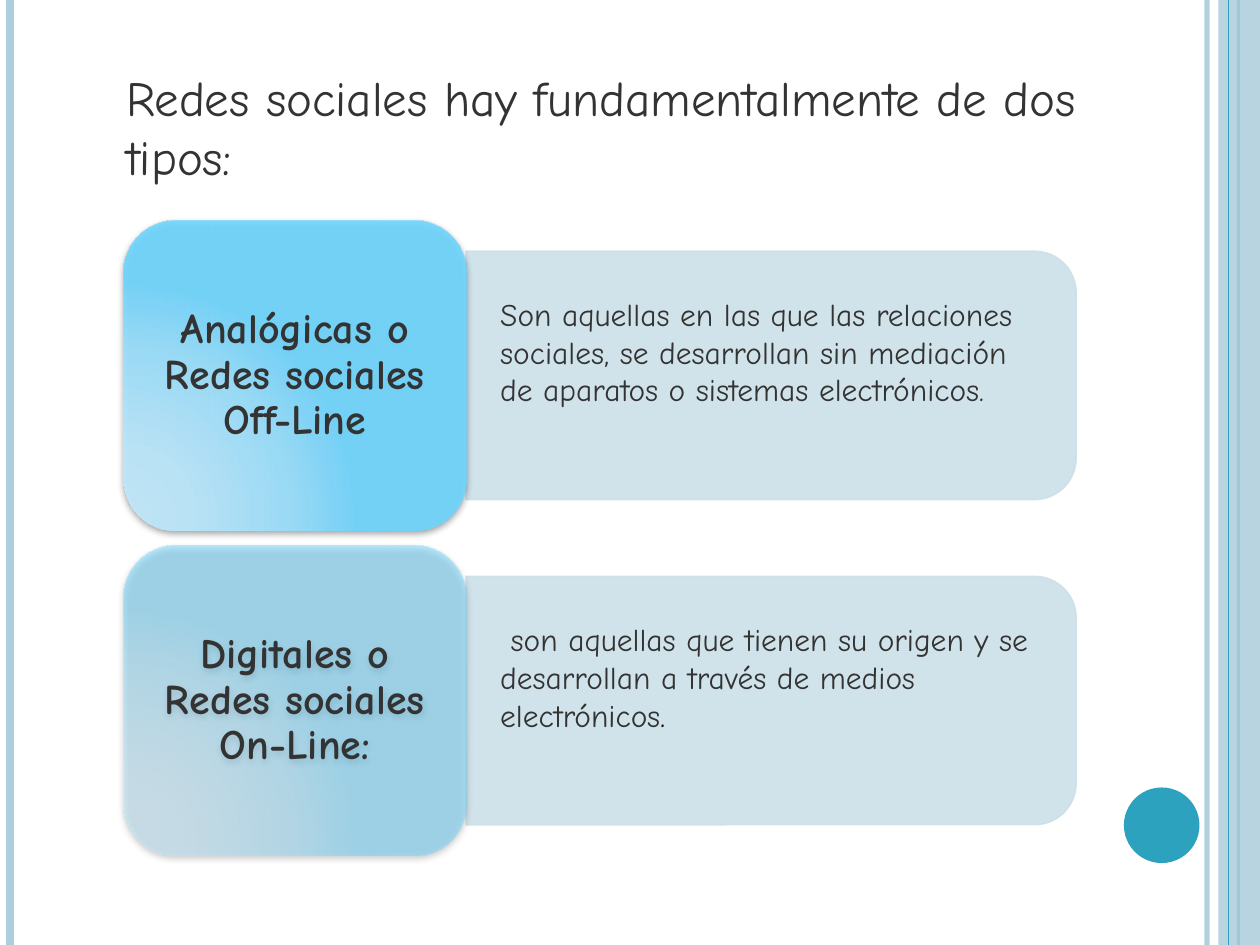
from lxml import etree
from pptx import Presentation
from pptx.dml.color import RGBColor
from pptx.enum.shapes import MSO_CONNECTOR, MSO_SHAPE
from pptx.enum.text import MSO_ANCHOR, PP_ALIGN
from pptx.oxml import parse_xml
from pptx.oxml.ns import nsdecls, qn
from pptx.util import Inches, Pt

STRAIGHT = MSO_CONNECTOR.STRAIGHT
RECT, OVAL = MSO_SHAPE.RECTANGLE, MSO_SHAPE.OVAL
CARD, PANEL = MSO_SHAPE.ROUNDED_RECTANGLE, MSO_SHAPE.ROUND_2_SAME_RECTANGLE
MIDDLE = MSO_ANCHOR.MIDDLE
LEFT, CENTER = PP_ALIGN.LEFT, PP_ALIGN.CENTER

FONT = "Comic Neue"
INK, ACCENT, PALE, PANEL_FILL = "333333", "2DA2BF", "ADCEDC", "CDE0E8"
GRADIENT = [(0, "C2EBFD"), (30, "BCE9FE"), (75, "96DFFE"), (100, "70D6FF")]

TITLE = "Redes sociales hay fundamentalmente de dos tipos:"
# heading, description runs (text, colour), opacity of the card
NETWORKS = [
    ("Analógicas o Redes sociales Off-Line",
     [("Son aquellas en las que las relaciones sociales, se desarrollan sin "
       "mediación de aparatos o sistemas electrónicos.", INK)], 90),
    ("Digitales o Redes sociales On-Line:",
     [(" son aquellas que tienen su origen y se desarrollan a través de "
       "medios electrónicos", INK), (".", "000000")], 50),
]
# x, colour, width in points, opacity
RULES_BEHIND = [(9.58, PALE, 3, 93), (0.08, PALE, 4.5, 100), (9.83, ACCENT, 1.5, 100)]
RULES_FRONT = [(9.75, ACCENT, 0.75, 100)]

SLIDE_W, SLIDE_H = 10, 7.5
CARD_X, CARD_Y, CARD_W, CARD_H, ROW_PITCH = 0.98, 1.75, 2.72, 2.46, 2.58
PANEL_W, PANEL_H = 4.84, 1.97
TEXT_W, TEXT_H = 4.74, 1.77


def paint(fill, color, opacity=100):
    fill.solid()
    fill.fore_color.rgb = RGBColor.from_string(color)
    if opacity < 100:
        tint = fill._xPr.find(qn("a:solidFill"))[0]
        etree.SubElement(tint, qn("a:alpha"), val=str(opacity * 1000))


def add_rule(page, x, color, width, opacity):
    rule = page.shapes.add_connector(
        STRAIGHT, Inches(x), 0, Inches(x), Inches(SLIDE_H))
    rule.line.width = Pt(width)
    paint(rule.line.fill, color, opacity)
    etree.SubElement(rule._element.spPr, qn("a:effectLst"))


def add_box(page, kind, left, top, width, height):
    box = page.shapes.add_shape(
        kind, Inches(left), Inches(top), Inches(width), Inches(height))
    box.shadow.inherit = False
    box.line.fill.background()
    return box


def write(frame, runs, size, align=LEFT, bold=False):
    frame.word_wrap = True
    frame.vertical_anchor = MIDDLE
    para = frame.paragraphs[0]
    para.alignment = align
    for text, color in runs:
        span = para.add_run()
        span.text = text
        span.font.name = FONT
        span.font.size = Pt(size)
        span.font.bold = bold
        span.font.color.rgb = RGBColor.from_string(color)
    return para


def glaze(box, opacity):
    """Give a card its radial gradient and soft drop shadow."""
    stops = "".join(
        f'<a:gs pos="{pos * 1000}"><a:srgbClr val="{color}">'
        f'<a:alpha val="{opacity * 1000}"/></a:srgbClr></a:gs>'
        for pos, color in GRADIENT)
    gradient = parse_xml(
        f'<a:gradFill {nsdecls("a")} rotWithShape="1"><a:gsLst>{stops}</a:gsLst>'
        '<a:path path="circle"><a:fillToRect l="5000" t="100000" r="120000" '
        'b="10000"/></a:path></a:gradFill>')
    shadow = parse_xml(
        f'<a:outerShdw {nsdecls("a")} blurRad="{Pt(4)}" dist="{Pt(2)}" '
        'dir="5400000" rotWithShape="0"><a:srgbClr val="000000">'
        '<a:alpha val="40000"/></a:srgbClr></a:outerShdw>')
    box.fill.background()
    properties = box._element.spPr
    properties.replace(properties.find(qn("a:noFill")), gradient)
    properties.find(qn("a:effectLst")).append(shadow)


def add_network(page, row, heading, description, opacity):
    top = CARD_Y + row * ROW_PITCH
    middle = top + CARD_H / 2
    panel_x = CARD_X + CARD_W

    # The panel is a quarter turn, so its sides swap around the same centre.
    panel = add_box(page, PANEL, panel_x + (PANEL_W - PANEL_H) / 2,
                    middle - PANEL_W / 2, PANEL_H, PANEL_W)
    panel.rotation = 90
    paint(panel.fill, PANEL_FILL, 90)
    panel.line.width = Pt(1)
    paint(panel.line.fill, PANEL_FILL, 90)

    label = page.shapes.add_textbox(
        Inches(panel_x), Inches(middle - TEXT_H / 2), Inches(TEXT_W), Inches(TEXT_H))
    frame = label.text_frame
    frame.margin_left = frame.margin_right = Inches(0.27)
    frame.margin_top, frame.margin_bottom = Inches(0.14), Inches(0.52)
    write(frame, description, 18)

    card = add_box(page, CARD, CARD_X, top, CARD_W, CARD_H)
    glaze(card, opacity)
    para = write(card.text_frame, [(heading, INK)], 24, CENTER, bold=True)
    para.line_spacing = 0.9


def main():
    deck = Presentation()
    deck.slide_width, deck.slide_height = Inches(SLIDE_W), Inches(SLIDE_H)
    page = deck.slides.add_slide(deck.slide_layouts[5])

    for rule in RULES_BEHIND:
        add_rule(page, *rule)
    band = add_box(page, RECT, 9.67, 0, 0.33, SLIDE_H)
    paint(band.fill, PALE, 87)
    for rule in RULES_FRONT:
        add_rule(page, *rule)
    dot = add_box(page, OVAL, 8.92, 6.25, 0.6, 0.6)
    paint(dot.fill, ACCENT)

    title = page.shapes.title
    title.left, title.top = Inches(0.9), Inches(0)
    title.width, title.height = Inches(7.8), Inches(2)
    write(title.text_frame, [(TITLE, INK)], 28)

    for row, network in enumerate(NETWORKS):
        add_network(page, row, *network)
    deck.save("out.pptx")


if __name__ == "__main__":
    main()
